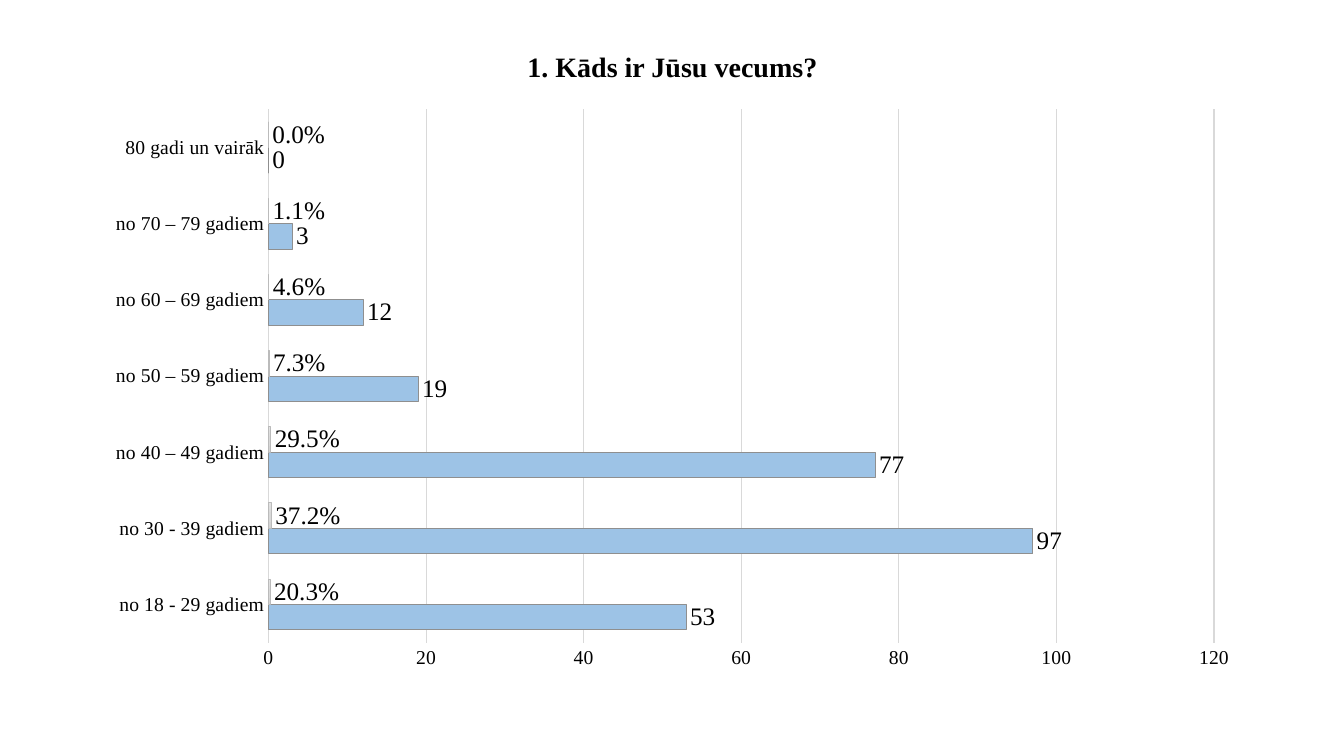
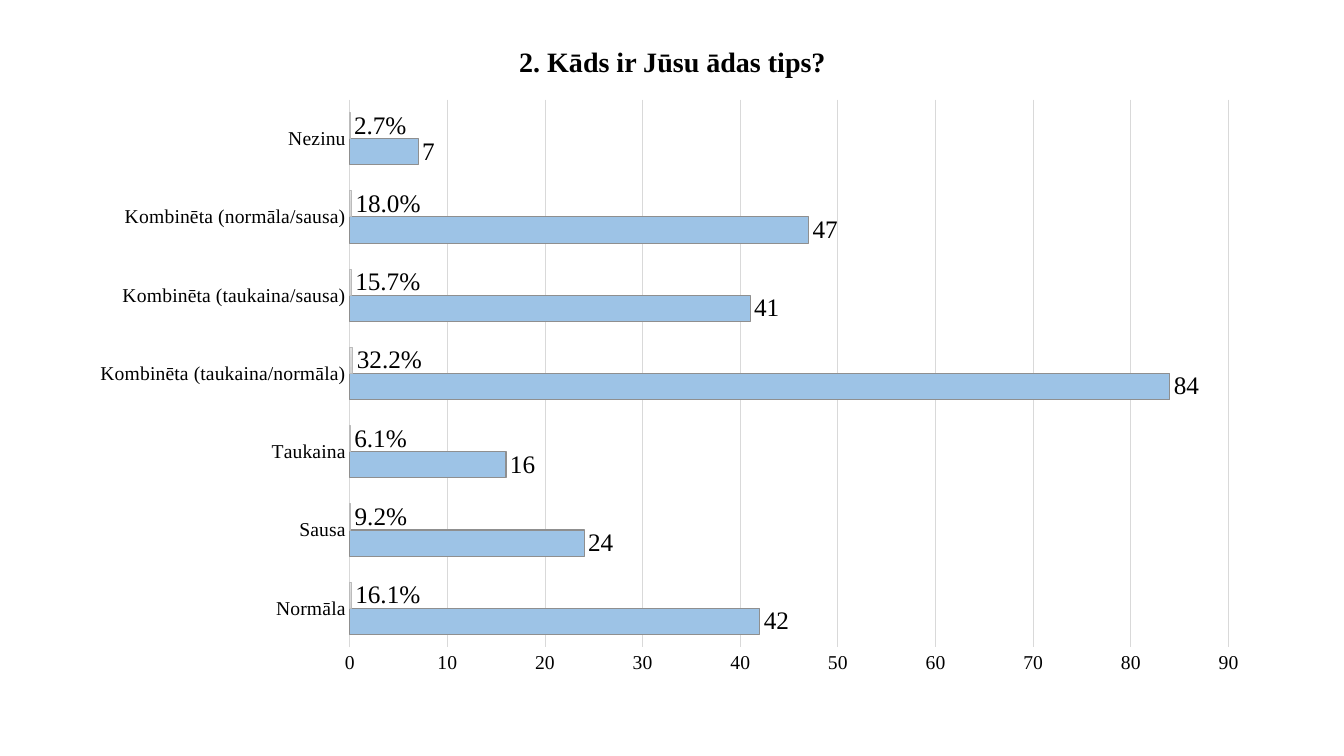
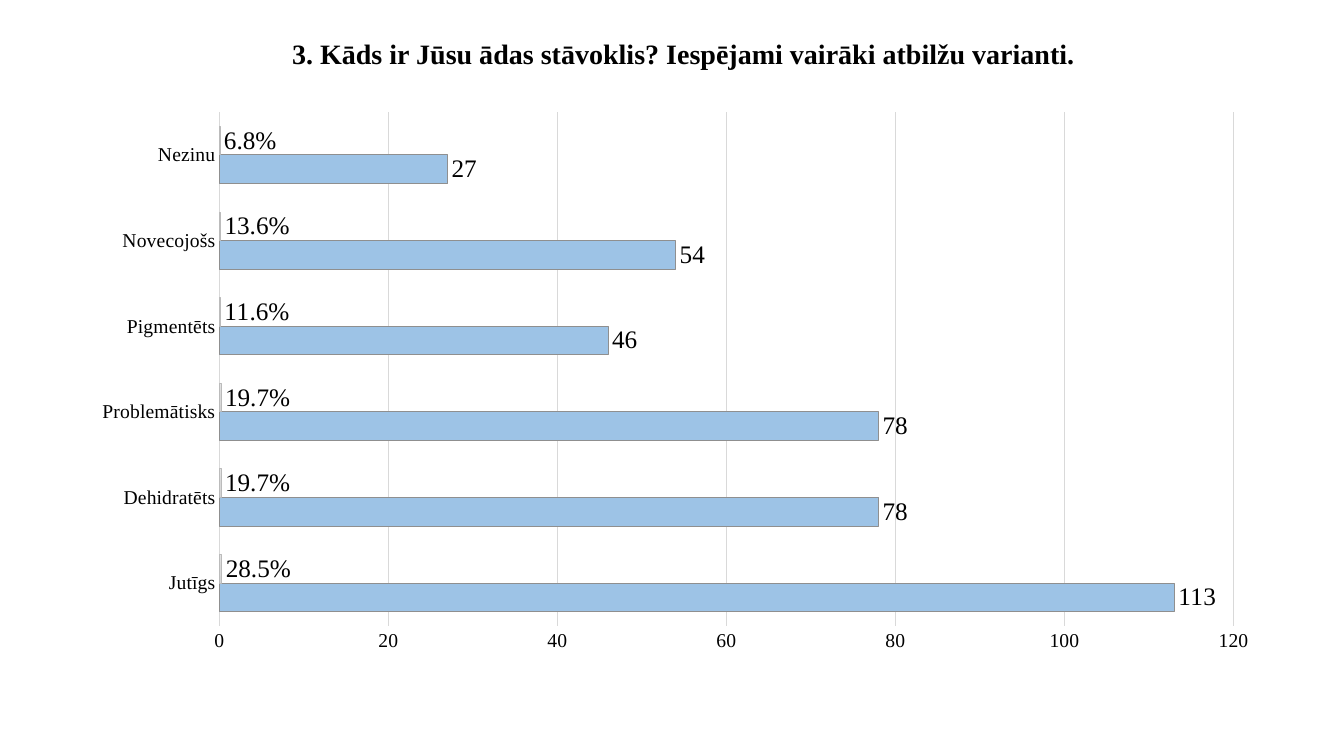
from lxml import etree
from pptx import Presentation
from pptx.chart.data import CategoryChartData
from pptx.dml.color import RGBColor
from pptx.enum.chart import XL_CHART_TYPE as ChartType
from pptx.enum.chart import XL_LABEL_POSITION as LabelPosition
from pptx.enum.chart import XL_TICK_MARK as TickMark
from pptx.enum.text import MSO_ANCHOR, PP_ALIGN
from pptx.oxml import parse_xml
from pptx.oxml.ns import nsdecls, qn
from pptx.util import Inches, Pt

COLORS = {
    "text": "000000",
    "count": "9DC3E6",
    "count_line": "8F8F8F",
    "share_line": "BBBBBB",
    "grid": "D9D9D9",
}
SHARE_GRADIENT = {0: "E2E2E2", 50: "D9D9D9", 100: "D4D4D4"}
FONT = "Times New Roman"

QUESTIONS = [
    {
        "title": "1. Kāds ir Jūsu vecums?",
        "title_box": (0.92, 0.17, 11.5, 1.01),
        "chart_box": (0.92, 0.97, 11.5, 5.78),
        "answers": [
            ("no 18 - 29 gadiem", 53, 0.203),
            ("no 30 - 39 gadiem", 97, 0.372),
            ("no 40 – 49 gadiem", 77, 0.295),
            ("no 50 – 59 gadiem", 19, 0.073),
            ("no 60 – 69 gadiem", 12, 0.046),
            ("no 70 – 79 gadiem", 3, 0.011),
            ("80 gadi un vairāk", 0, 0),
        ],
    },
    {
        "title": "2. Kāds ir Jūsu ādas tips?",
        "title_box": (0.92, 0, 11.5, 1.26),
        "chart_box": (0.76, 0.87, 11.76, 5.93),
        "answers": [
            ("Normāla", 42, 0.161),
            ("Sausa", 24, 0.092),
            ("Taukaina", 16, 0.061),
            ("Kombinēta (taukaina/normāla)", 84, 0.322),
            ("Kombinēta (taukaina/sausa)", 41, 0.157),
            ("Kombinēta (normāla/sausa)", 47, 0.18),
            ("Nezinu", 7, 0.027),
        ],
    },
    {
        "title": "3. Kāds ir Jūsu ādas stāvoklis? Iespējami vairāki atbilžu varianti.",
        "title_box": (1.03, 0, 11.5, 1.09),
        "chart_box": (0.79, 0.91, 11.75, 5.8),
        "plot_area": {"x": 0.118, "y": 0.035, "w": 0.856, "h": 0.879},
        "answers": [
            ("Jutīgs", 113, 0.285),
            ("Dehidratēts", 78, 0.197),
            ("Problemātisks", 78, 0.197),
            ("Pigmentēts", 46, 0.116),
            ("Novecojošs", 54, 0.136),
            ("Nezinu", 27, 0.068),
        ],
    },
]


def style_font(font, size, bold=False):
    for name, value in {"name": FONT, "size": Pt(size), "bold": bold}.items():
        setattr(font, name, value)
    font.color.rgb = RGBColor.from_string(COLORS["text"])


def style_line(line, color):
    line.color.rgb = RGBColor.from_string(COLORS[color])
    line.width = Pt(0.75)


prs = Presentation()
prs.slide_width, prs.slide_height = Inches(13.33), Inches(7.5)
blank = prs.slide_layouts[6]

for question in QUESTIONS:
    slide = prs.slides.add_slide(blank)

    heading = slide.shapes.add_textbox(*map(Inches, question["title_box"])).text_frame
    heading.word_wrap = True
    heading.vertical_anchor = MSO_ANCHOR.MIDDLE
    paragraph = heading.paragraphs[0]
    paragraph.alignment = PP_ALIGN.CENTER
    paragraph.line_spacing = 0.9
    run = paragraph.add_run()
    run.text = question["title"]
    style_font(run.font, 20, bold=True)

    names, counts, shares = zip(*question["answers"])
    answers = CategoryChartData()
    answers.categories = names
    answers.add_series("Series 1", counts)
    answers.add_series("Series 2", shares, number_format="0.0%")
    chart = slide.shapes.add_chart(
        ChartType.BAR_CLUSTERED, *map(Inches, question["chart_box"]), answers
    ).chart
    chart.has_title = chart.has_legend = False
    style_font(chart.font, 10)
    chart.font.name = "Calibri"

    for axis in (chart.category_axis, chart.value_axis):
        axis.major_tick_mark = axis.minor_tick_mark = TickMark.NONE
        style_font(axis.tick_labels.font, 14)
    style_line(chart.category_axis.format.line, "grid")
    chart.value_axis.format.line.fill.background()
    chart.value_axis.has_major_gridlines = True
    style_line(chart.value_axis.major_gridlines.format.line, "grid")

    plot = chart.plots[0]
    plot.gap_width, plot.overlap, plot.vary_by_categories = 100, 0, False
    count_bars, share_bars = plot.series
    count_bars.format.fill.solid()
    count_bars.format.fill.fore_color.rgb = RGBColor.from_string(COLORS["count"])
    share_bars.format.fill.gradient()
    share_bars.format.fill.gradient_angle = 270
    stops = share_bars._element.find(".//" + qn("a:gsLst"))
    for stop in list(stops):
        stops.remove(stop)
    for percent, color in SHARE_GRADIENT.items():
        stop = etree.SubElement(stops, qn("a:gs"), pos=str(percent * 1000))
        etree.SubElement(stop, qn("a:srgbClr"), val=color)

    for bars, line_color, number_format in (
        (count_bars, "count_line", "General"),
        (share_bars, "share_line", "0.0%"),
    ):
        style_line(bars.format.line, line_color)
        bars.invert_if_negative = False
        label_format = {
            "show_value": True,
            "position": LabelPosition.OUTSIDE_END,
            "number_format": number_format,
            "number_format_is_linked": False,
        }
        for name, value in label_format.items():
            setattr(bars.data_labels, name, value)
        style_font(bars.data_labels.font, 18)

    if "plot_area" in question:
        layout = parse_xml(f"<c:layout {nsdecls('c')}><c:manualLayout/></c:layout>")
        settings = {"layoutTarget": "inner", "xMode": "edge", "yMode": "edge"}
        settings.update(question["plot_area"])
        for name, value in settings.items():
            etree.SubElement(layout[0], qn(f"c:{name}"), val=str(value))
        plot_area = chart._chartSpace.chart.plotArea
        for automatic in plot_area.findall(qn("c:layout")):
            plot_area.remove(automatic)
        plot_area.insert(0, layout)

prs.save("out.pptx")
